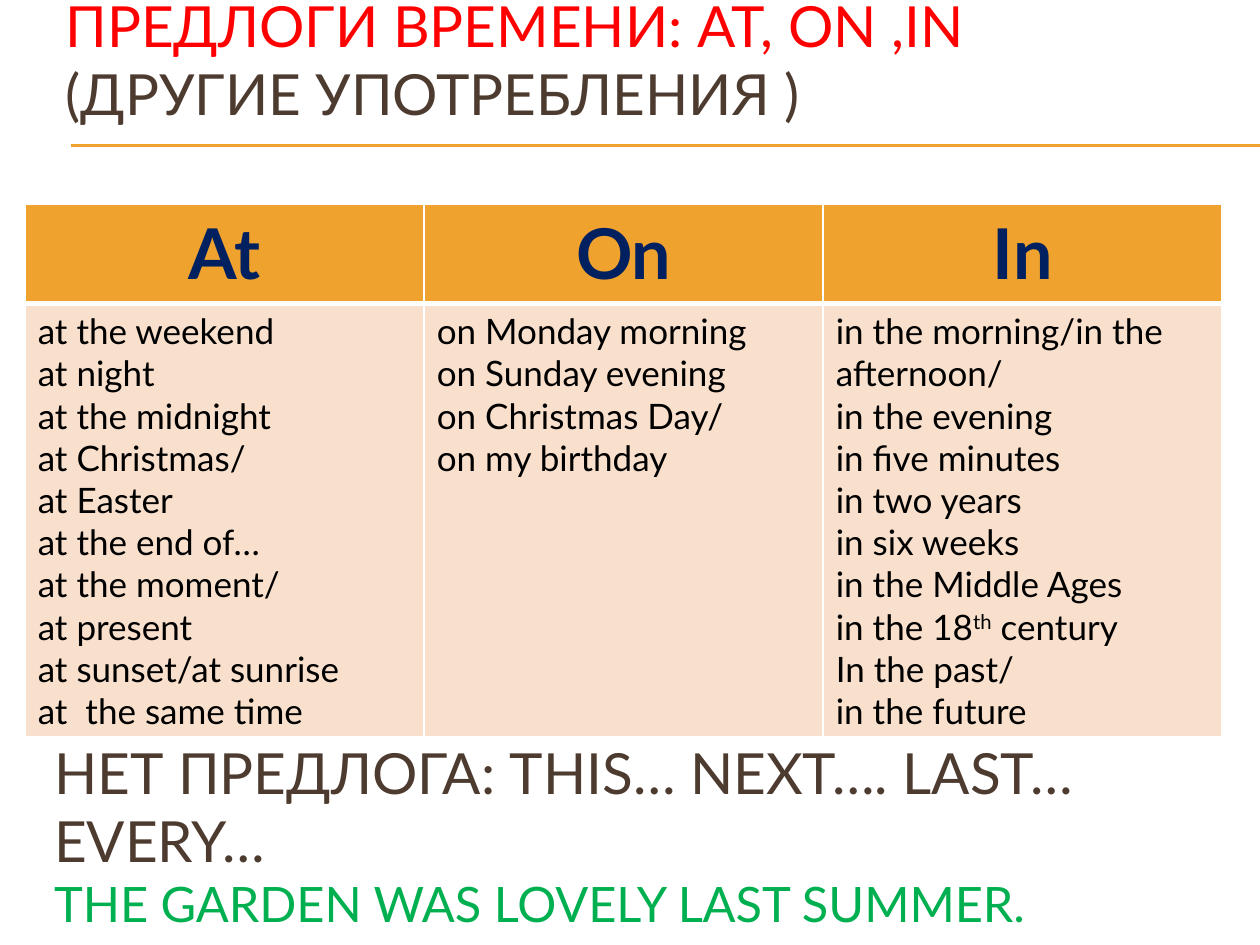
from lxml import etree
from pptx import Presentation, util as u
from pptx.dml.color import RGBColor
from pptx.enum import shapes, text
from pptx.oxml.ns import qn

ORANGE = RGBColor(0xF0, 0xA2, 0x2E)
PEACH = RGBColor(0xF9, 0xE0, 0xCD)
BROWN = RGBColor(0x4E, 0x3B, 0x30)
RED = RGBColor(0xFF, 0x00, 0x00)
GREEN = RGBColor(0x00, 0xB0, 0x50)
NAVY = RGBColor(0x00, 0x20, 0x60)
BLACK = RGBColor(0x00, 0x00, 0x00)
WHITE = RGBColor(0xFF, 0xFF, 0xFF)

HEADINGS = ["At", "On", "In"]
EXAMPLES = [
    ["at the weekend", "at night", "at the midnight", "at Christmas/",
     "at Easter", "at the end of…", "at the moment/", "at present",
     "at sunset/at sunrise", "at  the same time"],
    ["on Monday morning", "on Sunday evening", "on Christmas Day/",
     "on my birthday"],
    ["in the morning/in the afternoon/", "in the evening", "in five minutes",
     "in two years", "in six weeks", "in the Middle Ages",
     ("in the 18", "th", " century"), "In the past/", "in the future"],
]


class SlideBuilder:
    """Holds the style and the slide; lengths are shares of the slide's size."""

    font = "Lato"

    def __init__(self, presentation):
        self.width = presentation.slide_width
        self.height = presentation.slide_height
        self.slide = presentation.slides.add_slide(presentation.slide_layouts[6])

    def x(self, share):
        return round(self.width * share)

    def y(self, share):
        return round(self.height * share)

    def box(self, left, top, width, height):
        return self.x(left), self.y(top), self.x(width), self.y(height)

    def run(self, paragraph, words, size, color, bold=False):
        run = paragraph.add_run()
        run.text = words
        run.font.name = self.font
        run.font.size = u.Pt(size)
        run.font.bold = bold
        run.font.color.rgb = color
        return run

    def rule(self, left, top):
        """Thin line running from left to the slide's right edge."""
        line = self.slide.shapes.add_connector(
            shapes.MSO_CONNECTOR.STRAIGHT,
            self.x(left), self.y(top), self.width, self.y(top))
        line.line.color.rgb = ORANGE
        line.line.width = u.Pt(0.75)
        etree.SubElement(line._element.spPr, qn("a:effectLst"))

    def lines(self, place, items):
        """Text box with one paragraph for each (words, size, color)."""
        frame = self.slide.shapes.add_textbox(*self.box(*place)).text_frame
        frame.word_wrap = True
        frame.vertical_anchor = text.MSO_ANCHOR.MIDDLE
        frame.margin_left = frame.margin_right = 0
        frame.margin_top = frame.margin_bottom = 0
        for index, item in enumerate(items):
            paragraph = frame.add_paragraph() if index else frame.paragraphs[0]
            self.run(paragraph, *item)

    def borders(self, cell, bottom):
        properties = cell._tc.get_or_add_tcPr()
        widths = {"lnL": 1, "lnR": 1, "lnT": 1, "lnB": bottom}
        for index, (side, width) in enumerate(widths.items()):
            line = etree.Element(qn(f"a:{side}"), w=str(u.Pt(width)))
            fill = etree.SubElement(line, qn("a:solidFill"))
            etree.SubElement(fill, qn("a:srgbClr"), val=str(WHITE))
            properties.insert(index, line)

    def fill_cell(self, cell, color, bottom=1):
        cell.fill.solid()
        cell.fill.fore_color.rgb = color
        self.borders(cell, bottom)

    def table(self, place, header_share, headings, columns):
        left, top, width, height = self.box(*place)
        table = self.slide.shapes.add_table(
            2, len(headings), left, top, width, height).table
        table.rows[0].height = round(height * header_share)
        table.rows[1].height = height - table.rows[0].height
        for index, (heading, examples) in enumerate(zip(headings, columns)):
            header, body = table.cell(0, index), table.cell(1, index)
            self.fill_cell(header, ORANGE, bottom=3)
            paragraph = header.text_frame.paragraphs[0]
            paragraph.alignment = text.PP_ALIGN.CENTER
            self.run(paragraph, heading, 40, NAVY, bold=True)
            self.fill_cell(body, PEACH)
            self.examples(body.text_frame, examples)

    def examples(self, frame, examples):
        """A tuple stands for words, a superscript and the words after it."""
        for index, example in enumerate(examples):
            paragraph = frame.add_paragraph() if index else frame.paragraphs[0]
            parts = (example,) if isinstance(example, str) else example
            for position, words in enumerate(parts):
                run = self.run(paragraph, words, 20, BLACK)
                if position == 1:
                    run.font._element.set("baseline", "30000")


def main():
    presentation = Presentation()
    presentation.slide_width = u.Inches(10)
    presentation.slide_height = u.Inches(7.5)
    builder = SlideBuilder(presentation)
    for top in (1.15, 1.16):
        builder.rule(0.056, top / 7.5)
    builder.lines((0.052, 0, 0.92, 0.94 / 7.5), [
        ("ПРЕДЛОГИ ВРЕМЕНИ: AT, ON ,IN", 32.4, RED),
        ("(ДРУГИЕ УПОТРЕБЛЕНИЯ )", 32.4, BROWN)])
    builder.table((0.02, 1.62 / 7.5, 0.95, 4.22 / 7.5), 0.79 / 4.22,
                  HEADINGS, EXAMPLES)
    builder.lines((0.043, 5.86 / 7.5, 0.93, 1.54 / 7.5), [
        ("НЕТ ПРЕДЛОГА: THIS… NEXT…. LAST… EVERY…", 32.4, BROWN),
        ("THE GARDEN WAS LOVELY LAST SUMMER.", 27.9, GREEN)])
    presentation.save("out.pptx")


if __name__ == "__main__":
    main()
